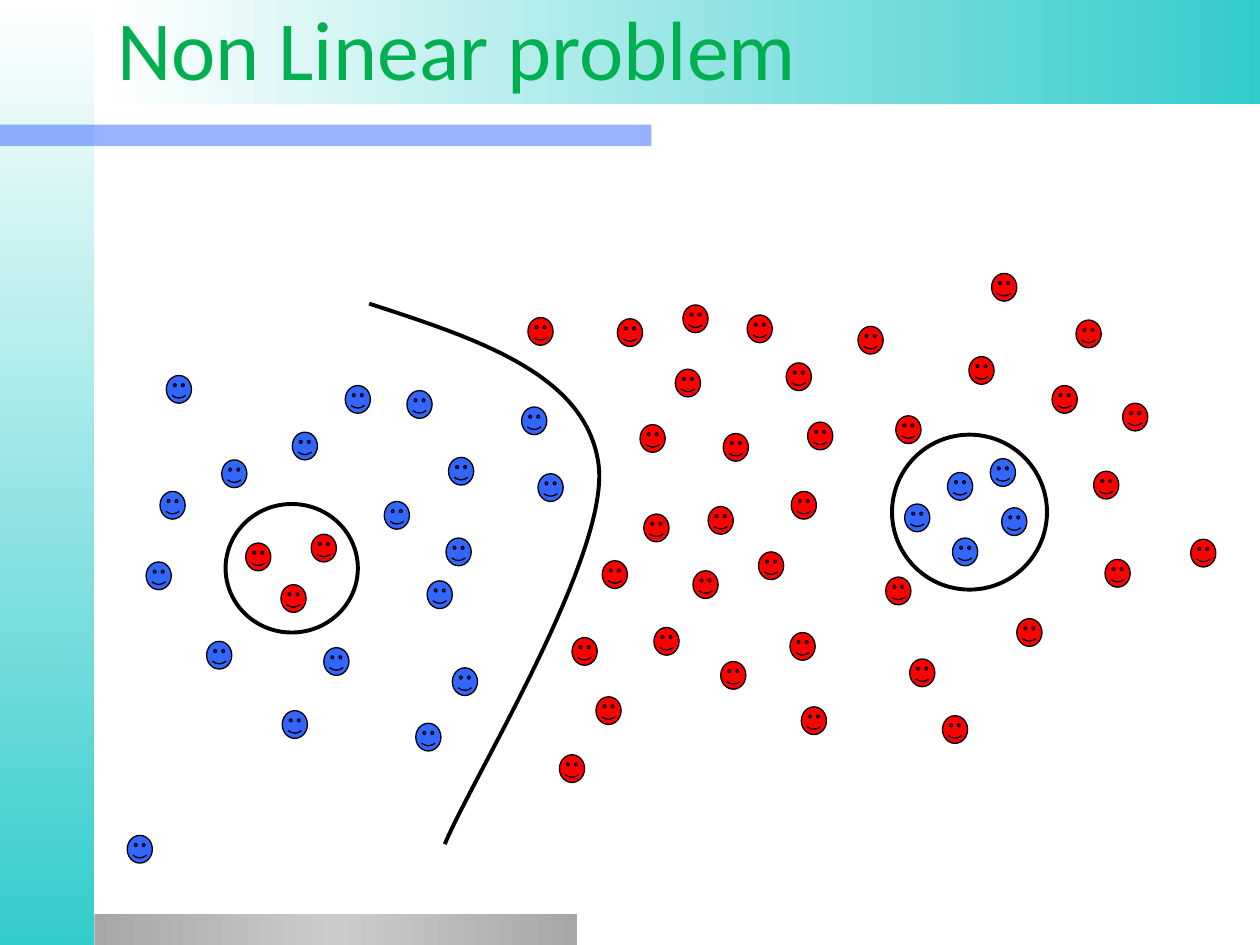
import copy

import lxml.etree
import pptx
import pptx.dml.color
import pptx.enum.shapes
import pptx.enum.text
import pptx.oxml.ns
import pptx.util

PX = 9144
COLORS = {
    "white": "FFFFFF",
    "teal": "33CCCC",
    "gray": "A7A7A7",
    "silver": "CCCCCC",
    "blue": "3366FF",
    "red": "FF0000",
    "green": "00B050",
    "black": "000000",
}
SHAPES = pptx.enum.shapes.MSO_SHAPE
FACE_SIZE = (20, 22)
BOUNDARY = [(193, 41), (279, 69), (365, 97), (375, 168), (385, 239), (274, 419), (253, 470)]
RINGS = [(79, 200, 105, 102), (608, 145, 123, 123)]
FACES = {
    "blue": [
        (132, 143), (174, 106), (223, 110), (64, 309), (27, 190), (256, 163),
        (124, 364), (32, 98), (76, 165), (16, 246), (254, 227), (230, 374),
        (239, 261), (327, 176), (259, 330), (157, 314), (205, 198), (1, 463),
        (652, 175), (656, 227), (695, 203), (686, 164), (618, 200), (314, 123),
    ],
    "red": [
        (378, 245), (390, 53), (436, 93), (442, 42), (493, 50), (411, 208),
        (408, 137), (669, 83), (462, 202), (528, 190), (687, 17), (474, 144),
        (541, 135), (450, 253), (502, 238), (768, 174), (611, 130), (735, 106),
        (603, 258), (754, 54), (524, 88), (419, 298), (373, 353), (344, 399),
        (319, 52), (147, 224), (95, 231), (527, 302), (622, 323), (707, 291),
        (777, 244), (791, 120), (845, 228), (123, 264), (581, 59), (472, 325),
        (536, 361), (648, 368), (354, 306),
    ],
}


def color(name):
    """Return the named colour as an RGB value."""
    return pptx.dml.color.RGBColor.from_string(COLORS[name])


def outline(shape, points):
    """Give a shape a black line of the given width and no shadow."""
    shape.shadow.inherit = False
    shape.line.color.rgb = color("black")
    shape.line.width = pptx.util.Pt(points)


def add_shape(shapes, preset, box):
    """Add a preset shape in a pixel box, without shadow."""
    shape = shapes.add_shape(preset, *(length * PX for length in box))
    shape.shadow.inherit = False
    return shape


def add_bar(shapes, box):
    """Add a rectangle without a line."""
    bar = add_shape(shapes, SHAPES.RECTANGLE, box)
    bar.line.fill.background()
    return bar


def add_gradient_bar(shapes, box, names, angle):
    """Add a bar whose gradient runs evenly through the named colours."""
    bar = add_bar(shapes, box)
    bar.fill.gradient()
    bar.fill.gradient_angle = angle
    first = bar.element.xpath(".//a:gs")[0]
    for _ in names[2:]:
        first.addnext(copy.deepcopy(first))
    for index, (stop, name) in enumerate(zip(bar.fill.gradient_stops, names)):
        stop.position = index / (len(names) - 1)
        stop.color.rgb = color(name)


def add_frame(shapes, width, height):
    """Decorate the slide edges with gradient bars and the title rule."""
    add_gradient_bar(shapes, (0, 0, 75, height), ["white", "teal"], 270)
    add_gradient_bar(shapes, (75, height - 25, 383, 25), ["gray", "silver", "gray"], 0)
    add_gradient_bar(shapes, (84, 0, width - 84, 83), ["white", "teal"], 0)
    rule = add_bar(shapes, (0, 99, 517, 17))
    rule.fill.solid()
    rule.fill.fore_color.rgb = color("blue")
    rule_color = rule.element.xpath("./p:spPr/a:solidFill/a:srgbClr")[0]
    lxml.etree.SubElement(rule_color, pptx.oxml.ns.qn("a:alpha"), val="50000")


def add_boundary(shapes, left, top):
    """Draw the curved class boundary from its Bezier points."""
    points = [(left + x, top + y) for x, y in BOUNDARY]
    builder = shapes.build_freeform(*points[0], scale=PX)
    builder.add_line_segments(points[1:], close=False)
    boundary = builder.convert_to_shape()
    boundary.fill.background()
    outline(boundary, 2.25)
    segments = boundary.element.xpath(".//a:lnTo")
    for start in range(0, len(segments), 3):
        curve = lxml.etree.Element(pptx.oxml.ns.qn("a:cubicBezTo"))
        segments[start].addprevious(curve)
        for segment in segments[start:start + 3]:
            curve.append(segment[0])
            segment.getparent().remove(segment)


def add_scatter(shapes, left, top):
    """Place the boundary, the outlier rings and the faces of both classes."""
    add_boundary(shapes, left, top)
    rings = shapes.add_group_shape()
    for x, y, width, height in RINGS:
        ring = add_shape(rings.shapes, SHAPES.OVAL, (left + x, top + y, width, height))
        ring.fill.background()
        outline(ring, 2.25)
    for name, places in FACES.items():
        for x, y in places:
            face = add_shape(shapes, SHAPES.SMILEY_FACE, (left + x, top + y, *FACE_SIZE))
            face.fill.solid()
            face.fill.fore_color.rgb = color(name)
            outline(face, 0.75)


def add_title(title, left, top, width, height):
    """Write the title and bring it in front of the frame."""
    title.left, title.top = left * PX, top * PX
    title.width, title.height = width * PX, height * PX
    title.text_frame.text = "Non Linear problem"
    title.text_frame.vertical_anchor = pptx.enum.text.MSO_ANCHOR.MIDDLE
    paragraph = title.text_frame.paragraphs[0]
    paragraph.alignment = pptx.enum.text.PP_ALIGN.LEFT
    paragraph.font.name = "Calibri"
    paragraph.font.size = pptx.util.Pt(48)
    paragraph.font.color.rgb = color("green")
    title.element.getparent().append(title.element)


def main():
    """Build and save the slide."""
    deck = pptx.Presentation()
    deck.slide_width, deck.slide_height = 1000 * PX, 750 * PX
    slide = deck.slides.add_slide(deck.slide_layouts[5])
    add_frame(slide.shapes, 1000, 750)
    add_scatter(slide.shapes, 100, 200)
    add_title(slide.shapes.title, 83, -11, 850, 97)
    deck.save("out.pptx")


if __name__ == "__main__":
    main()
